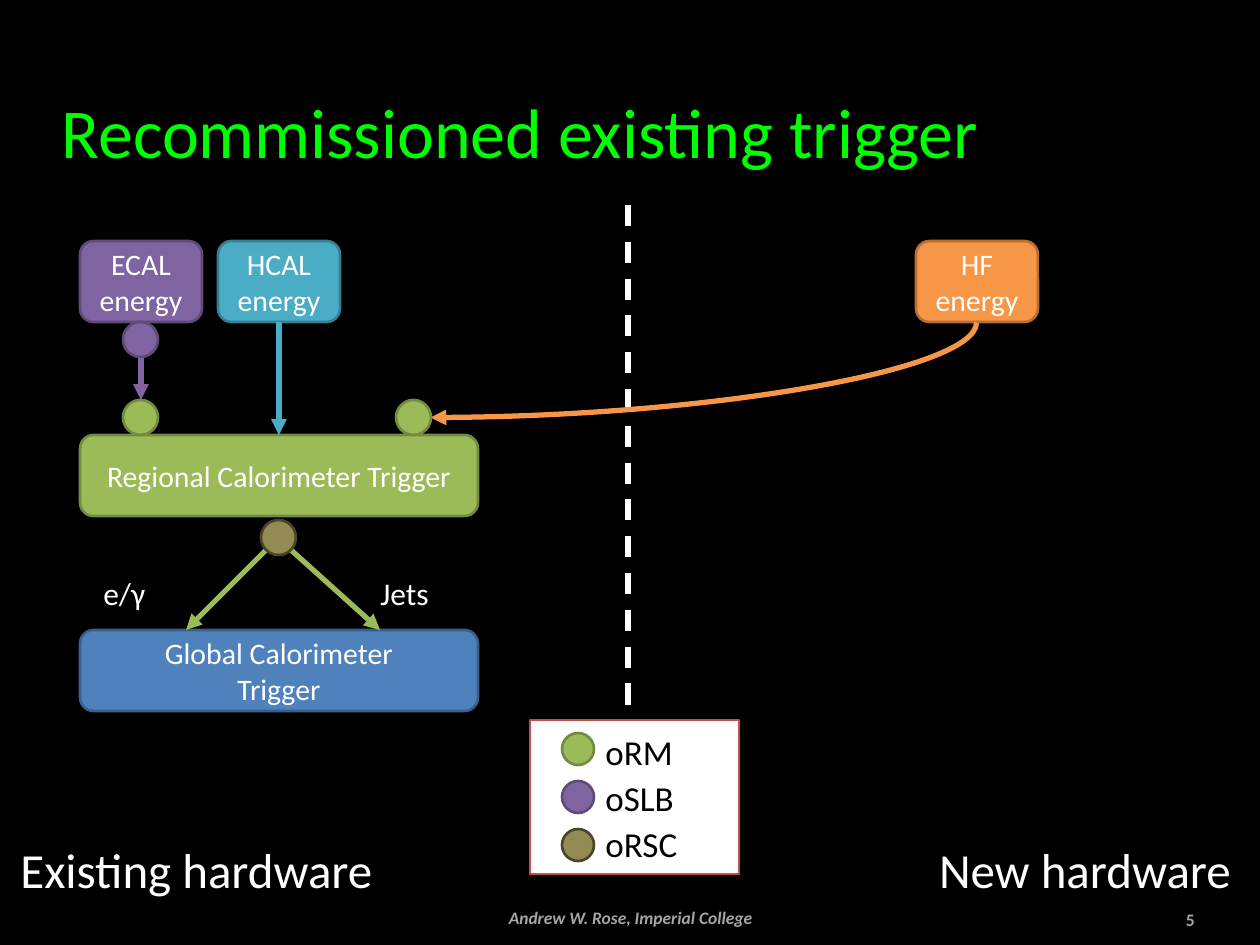
from lxml.etree import SubElement
from pptx import Presentation
from pptx.dml.color import RGBColor
from pptx.enum.dml import MSO_LINE
from pptx.enum.shapes import MSO_CONNECTOR, MSO_SHAPE
from pptx.enum.text import MSO_ANCHOR, MSO_AUTO_SIZE, PP_ALIGN
from pptx.oxml.ns import qn
from pptx.util import Emu, Inches, Pt

BLACK = RGBColor(0x00, 0x00, 0x00)
WHITE = RGBColor(0xFF, 0xFF, 0xFF)
GREY = RGBColor(0xA6, 0xA6, 0xA6)
LIME = RGBColor(0x00, 0xFF, 0x00)
RED = RGBColor(0xC0, 0x50, 0x4D)
GREEN, DARK_GREEN = RGBColor(0x9B, 0xBB, 0x59), RGBColor(0x73, 0x8A, 0x42)
PURPLE, DARK_PURPLE = RGBColor(0x80, 0x64, 0xA2), RGBColor(0x5F, 0x4A, 0x78)
TEAL, DARK_TEAL = RGBColor(0x4B, 0xAC, 0xC6), RGBColor(0x37, 0x7F, 0x92)
ORANGE, DARK_ORANGE = RGBColor(0xF7, 0x96, 0x46), RGBColor(0xB7, 0x6F, 0x34)
BLUE, DARK_BLUE = RGBColor(0x4F, 0x81, 0xBD), RGBColor(0x3A, 0x5F, 0x8C)
OLIVE, DARK_OLIVE = RGBColor(0x94, 0x8A, 0x54), RGBColor(0x4A, 0x45, 0x2A)

FONT = "Calibri"
TITLE = "Recommissioned existing trigger"
LINKS = {
    "oRM": (GREEN, DARK_GREEN),
    "oSLB": (PURPLE, DARK_PURPLE),
    "oRSC": (OLIVE, DARK_OLIVE),
}
BLOCKS = {
    "ECAL": (["ECAL", "energy"], 80, 241, 122, PURPLE, DARK_PURPLE),
    "HCAL": (["HCAL", "energy"], 218, 241, 122, TEAL, DARK_TEAL),
    "HF": (["HF", "energy"], 916, 241, 122, ORANGE, DARK_ORANGE),
    "RCT": (["Regional Calorimeter Trigger"], 80, 435, 398, GREEN, DARK_GREEN),
    "GCT": (["Global Calorimeter", "Trigger"], 80, 630, 398, BLUE, DARK_BLUE),
}
BLOCK_HEIGHT = 81
LINK_SIZE = 35
LINK_SPOTS = [("oRM", 123, 400), ("oSLB", 123, 322), ("oRM", 396, 400), ("oRSC", 261, 520)]
ARROWS = [
    ((141, 358), (141, 400), PURPLE),
    ((266, 550), (186, 630), GREEN),
    ((291, 550), (380, 630), GREEN),
]
LABELS = [
    ("e/γ", (91, 568, 98, 50), 18, PP_ALIGN.LEFT),
    ("Jets", (368, 568, 98, 50), 18, PP_ALIGN.LEFT),
    ("Existing hardware", (8, 833, 410, 72), 28, PP_ALIGN.LEFT),
    ("New hardware", (833, 833, 410, 72), 28, PP_ALIGN.RIGHT),
]
AUTHOR = "Andrew W. Rose, Imperial College"
PAGE = "5"
LEGEND = (530, 720, 209, 154)
KEY_LEFT, KEY_TOP, KEY_SIZE, KEY_PITCH = 562, 733, 32, 48


def px(length):
    return Emu(round(length * 914400 / 126))


def write(frame, lines, size, color, align, bold=False, italic=False):
    frame.word_wrap = True
    for index, line in enumerate(lines):
        paragraph = frame.paragraphs[0] if index == 0 else frame.add_paragraph()
        paragraph.alignment = align
        run = paragraph.add_run()
        run.text = line
        font = run.font
        font.name, font.size, font.color.rgb = FONT, Pt(size), color
        font.bold, font.italic = bold, italic


def add_solid(kind, box, fill, edge):
    solid = slide.shapes.add_shape(kind, *map(px, box))
    solid.shadow.inherit = False
    solid.fill.solid()
    solid.fill.fore_color.rgb = fill
    solid.line.color.rgb = edge
    solid.line.width = Pt(1.5)
    return solid


def add_label(text, box, size, align, color=WHITE, anchor=MSO_ANCHOR.TOP, **style):
    frame = slide.shapes.add_textbox(*map(px, box)).text_frame
    frame.vertical_anchor = anchor
    write(frame, [text], size, color, align, **style)


def add_line(start, end, color, kind=MSO_CONNECTOR.STRAIGHT, arrow=True):
    line = slide.shapes.add_connector(kind, *map(px, start + end))
    line.line.color.rgb = color
    line.line.width = Pt(3)
    if arrow:
        SubElement(line.line._get_or_add_ln(), qn("a:tailEnd"), type="triangle")
    SubElement(line._element.spPr, qn("a:effectLst"))
    return line


prs = Presentation()
prs.slide_width, prs.slide_height = Inches(10), Inches(7.5)
slide = prs.slides.add_slide(prs.slide_layouts[5])
slide.background.fill.solid()
slide.background.fill.fore_color.rgb = BLACK

title = slide.shapes.title
title.left, title.top, title.width, title.height = map(px, (49, 32, 1058, 147))
title.text_frame.auto_size = MSO_AUTO_SIZE.NONE
title.text_frame.vertical_anchor = MSO_ANCHOR.BOTTOM
write(title.text_frame, [TITLE], 40, LIME, PP_ALIGN.LEFT)
title.text_frame.paragraphs[0].space_before = Pt(4)

divider = add_line((628, 205), (628, 710), WHITE, arrow=False)
divider.line.dash_style = MSO_LINE.DASH

add_label(PAGE, (1086, 902, 121, 34), 10, PP_ALIGN.RIGHT, GREY, MSO_ANCHOR.MIDDLE, bold=True)
add_label(AUTHOR, (349, 900, 563, 34), 10, PP_ALIGN.CENTER, GREY, MSO_ANCHOR.MIDDLE,
          bold=True, italic=True)

legend = add_solid(MSO_SHAPE.RECTANGLE, LEGEND, WHITE, RED)
legend.text_frame.vertical_anchor = MSO_ANCHOR.TOP
write(legend.text_frame, LINKS, 20, BLACK, PP_ALIGN.LEFT)
for row, (entry, colors) in enumerate(zip(legend.text_frame.paragraphs, LINKS.values())):
    entry.line_spacing = 1.1
    entry._p.get_or_add_pPr().set("marL", str(Inches(0.5)))
    key = (KEY_LEFT, KEY_TOP + row * KEY_PITCH, KEY_SIZE, KEY_SIZE)
    add_solid(MSO_SHAPE.OVAL, key, *colors)

blocks = {}
for name, (lines, left, top, width, fill, edge) in BLOCKS.items():
    block = add_solid(MSO_SHAPE.ROUNDED_RECTANGLE, (left, top, width, BLOCK_HEIGHT), fill, edge)
    block.text_frame.vertical_anchor = MSO_ANCHOR.MIDDLE
    write(block.text_frame, lines, 17, WHITE, PP_ALIGN.CENTER)
    blocks[name] = block

for start, end, color in ARROWS:
    add_line(start, end, color)

hcal_feed = add_line((279, 322), (279, 435), TEAL)
hcal_feed.begin_connect(blocks["HCAL"], 2)
hcal_feed.end_connect(blocks["RCT"], 0)

hf_feed = add_line((656, 97), (751, 643), ORANGE, MSO_CONNECTOR.CURVE)
hf_feed._element.spPr.find(qn("a:prstGeom")).set("prst", "curvedConnector2")
hf_feed._element.spPr.find(qn("a:xfrm")).set("rot", str(90 * 60000))

for name, left, top in LINK_SPOTS:
    add_solid(MSO_SHAPE.OVAL, (left, top, LINK_SIZE, LINK_SIZE), *LINKS[name])

for label in LABELS:
    add_label(*label)

prs.save("out.pptx")
